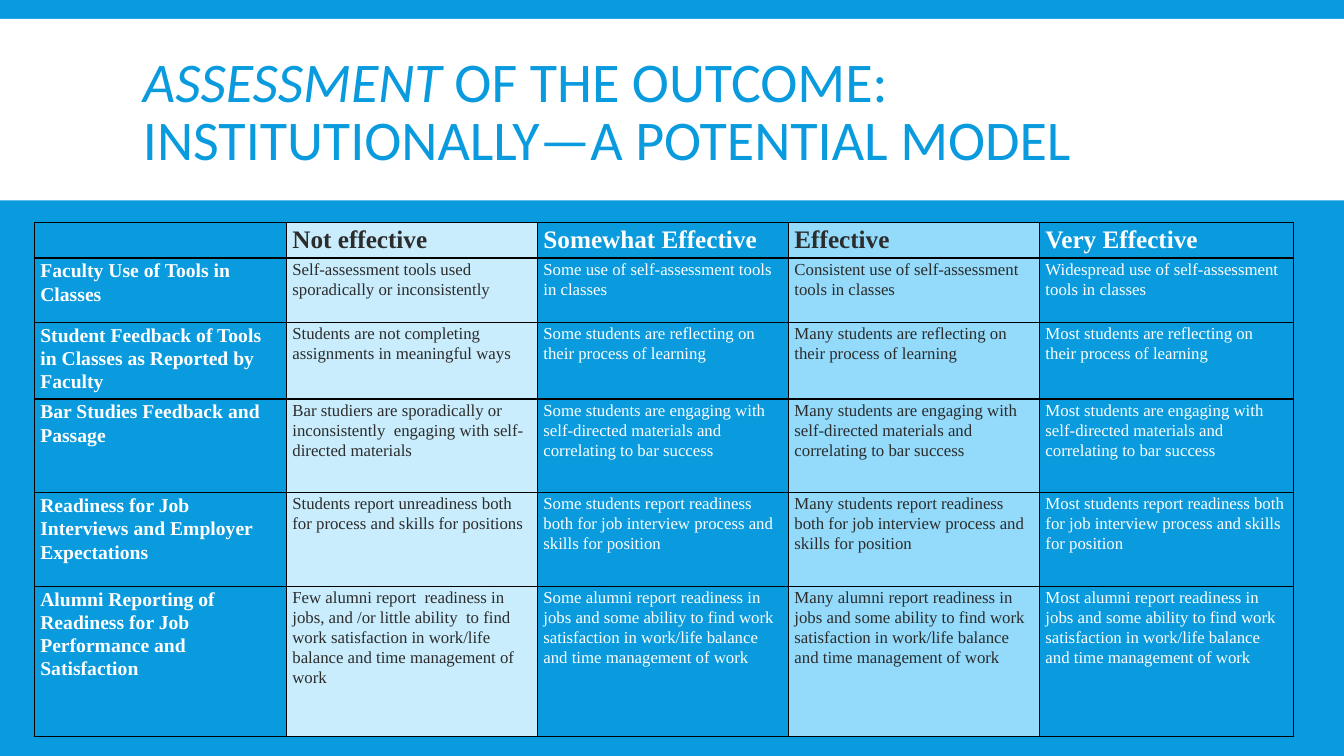
from pptx import Presentation
from pptx.dml.color import RGBColor
from pptx.enum.shapes import MSO_SHAPE as Shape
from pptx.enum.text import MSO_ANCHOR as Anchor
from pptx.oxml import parse_xml
from pptx.oxml.ns import nsdecls
from pptx.util import Inches, Pt

BLUE = RGBColor(0x09, 0x9B, 0xDD)
WHITE = RGBColor(0xFF, 0xFF, 0xFF)
DARK = RGBColor(0x2C, 0x2C, 0x2C)
PALE = RGBColor(0xC9, 0xED, 0xFD)
LIGHT = RGBColor(0x93, 0xDA, 0xFB)
BORDER = RGBColor(0, 0, 0)

WIDTH, HEIGHT = 13.33, 7.5
COLUMN_WIDTHS = [2.5, 2.49, 2.49, 2.49, 2.52]
ROW_HEIGHTS = [0.35, 0.64, 0.64, 0.93, 0.93, 1.49]
# Fill and text colour of each column; no fill lets the background through
COLUMN_STYLES = [(None, WHITE), (PALE, DARK), (None, WHITE), (LIGHT, DARK), (None, WHITE)]

HEADINGS = ["", "Not effective", "Somewhat Effective", "Effective", "Very Effective"]
# Criterion, lowest rating, then the wording shared by the higher ratings
SHARED_CRITERIA = [
    ("Student Feedback of Tools in Classes as Reported by Faculty",
     "Students are not completing assignments in meaningful ways",
     "students are reflecting on their process of learning"),
    ("Bar Studies Feedback and Passage",
     "Bar studiers are sporadically or inconsistently  engaging with self-directed materials",
     "students are engaging with self-directed materials and correlating to bar success"),
    ("Readiness for Job Interviews and Employer Expectations",
     "Students report unreadiness both for process and skills for positions",
     "students report readiness both for job interview process and skills for position"),
    ("Alumni Reporting of Readiness for Job Performance and Satisfaction",
     "Few alumni report  readiness in jobs, and /or little ability  to find work "
     "satisfaction in work/life balance and time management of work",
     "alumni report readiness in jobs and some ability to find work "
     "satisfaction in work/life balance and time management of work"),
]


def rating_row(criterion, lowest, shared, levels=("Some", "Many", "Most")):
    return [criterion, lowest] + [f"{level} {shared}" for level in levels]


RUBRIC = [
    HEADINGS,
    rating_row("Faculty Use of Tools in Classes",
               "Self-assessment tools used sporadically or inconsistently",
               "use of self-assessment tools in classes",
               ("Some", "Consistent", "Widespread")),
    *[rating_row(*criterion) for criterion in SHARED_CRITERIA],
]


def style_paragraph(paragraph, font_name, size, color, bold=False, spacing=1.0):
    paragraph.line_spacing = spacing
    font = paragraph.font
    font.name, font.size, font.bold = font_name, Pt(size), bold
    font.color.rgb = color


def add_band(slide):
    band = slide.shapes.add_shape(Shape.RECTANGLE, 0, Inches(0.025 * HEIGHT),
                                  Inches(WIDTH), Inches(0.24 * HEIGHT))
    band.shadow.inherit = False
    band.fill.solid()
    band.fill.fore_color.rgb = WHITE
    band.line.fill.background()


def add_title(slide):
    box = slide.shapes.add_textbox(Inches(1.32), Inches(0.31), Inches(10.7), Inches(1.65))
    frame = box.text_frame
    frame.word_wrap = True
    frame.vertical_anchor = Anchor.MIDDLE
    paragraph = frame.paragraphs[0]
    style_paragraph(paragraph, "Calibri", 40, BLUE, spacing=0.85)
    emphasis = paragraph.add_run()
    emphasis.text = "ASSESSMENT"
    emphasis.font.italic = True
    paragraph.add_run().text = " OF THE OUTCOME: INSTITUTIONALLY—A POTENTIAL MODEL"


def add_borders(cell):
    properties = cell._tc.get_or_add_tcPr()
    for side in ("lnL", "lnR", "lnT", "lnB"):
        properties.append(parse_xml(
            f'<a:{side} {nsdecls("a")} w="{Pt(1)}"><a:solidFill>'
            f'<a:srgbClr val="{BORDER}"/></a:solidFill></a:{side}>'))


def fill_cell(cell, text, size, bold, fill, color):
    cell.margin_left = cell.margin_right = Inches(0.06)
    cell.margin_top, cell.margin_bottom = Inches(0.01), 0
    add_borders(cell)
    if fill is None:
        cell.fill.background()
    else:
        cell.fill.solid()
        cell.fill.fore_color.rgb = fill
    cell.text = text
    style_paragraph(cell.text_frame.paragraphs[0], "Times New Roman", size, color, bold, 1.07)


def add_rubric(slide):
    table = slide.shapes.add_table(
        len(ROW_HEIGHTS), len(COLUMN_WIDTHS), Inches(0.34), Inches(2.21),
        Inches(sum(COLUMN_WIDTHS)), Inches(sum(ROW_HEIGHTS))).table
    table.horz_banding = False
    table.first_row = False
    for column, width in zip(table.columns, COLUMN_WIDTHS):
        column.width = Inches(width)
    for row_index, (height, texts) in enumerate(zip(ROW_HEIGHTS, RUBRIC)):
        table.rows[row_index].height = Inches(height)
        for column_index, (text, style) in enumerate(zip(texts, COLUMN_STYLES)):
            is_header, is_criterion = row_index == 0, column_index == 0
            size = 18 if is_header else 14 if is_criterion else 12
            fill_cell(table.cell(row_index, column_index), text, size,
                      is_header or is_criterion, *style)


def main():
    presentation = Presentation()
    presentation.slide_width = Inches(WIDTH)
    presentation.slide_height = Inches(HEIGHT)
    slide = presentation.slides.add_slide(presentation.slide_layouts[6])
    slide.background.fill.solid()
    slide.background.fill.fore_color.rgb = BLUE
    add_band(slide)
    add_title(slide)
    add_rubric(slide)
    presentation.save("out.pptx")


if __name__ == "__main__":
    main()
